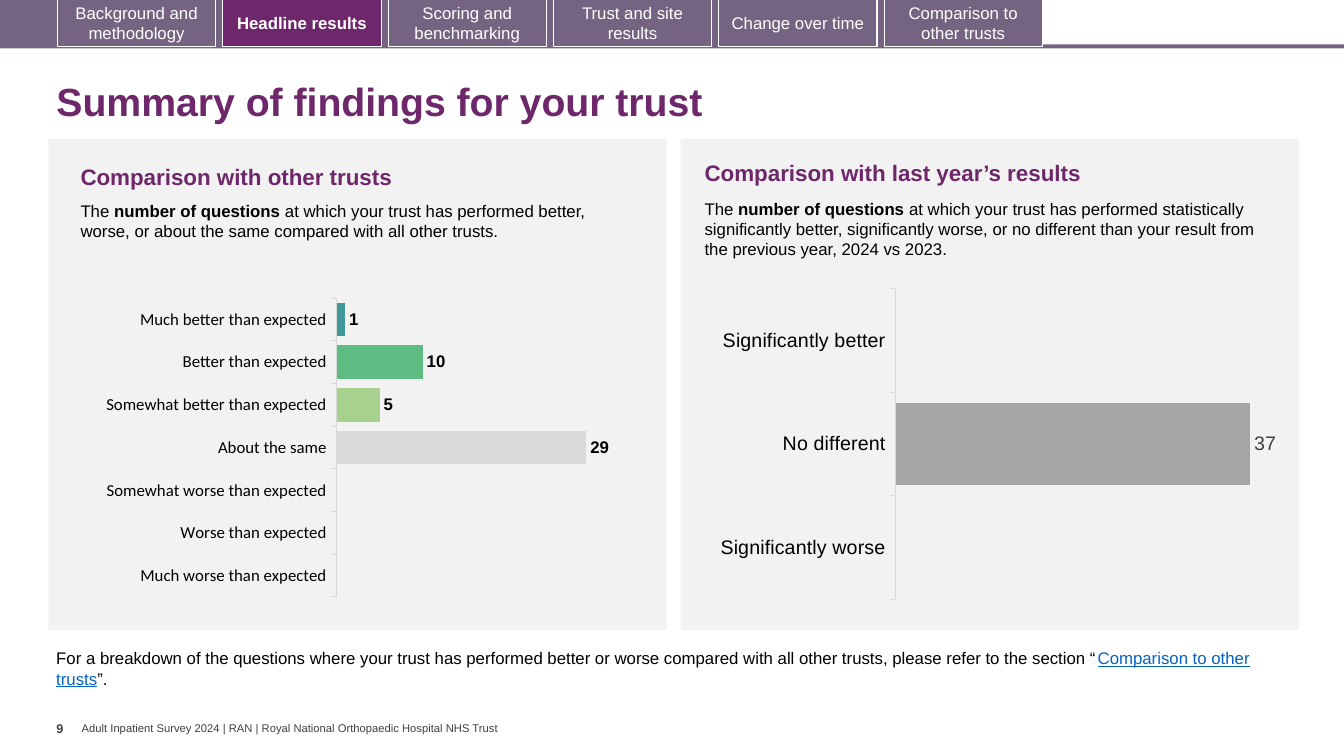
from typing import NamedTuple

from lxml.etree import SubElement
from pptx import Presentation
from pptx.chart.data import CategoryChartData
from pptx.dml.color import RGBColor
from pptx.enum.chart import XL_CHART_TYPE, XL_LABEL_POSITION, XL_TICK_LABEL_POSITION, XL_TICK_MARK
from pptx.enum.shapes import MSO_SHAPE
from pptx.enum.text import MSO_ANCHOR, MSO_AUTO_SIZE, PP_ALIGN
from pptx.oxml import parse_xml
from pptx.oxml.ns import nsdecls, qn
from pptx.util import Inches, Pt

PURPLE = RGBColor(0x6D, 0x27, 0x6A)
MAUVE = RGBColor(0x75, 0x63, 0x82)
WHITE = RGBColor(0xFF, 0xFF, 0xFF)
BLACK = RGBColor(0x00, 0x00, 0x00)
CHARCOAL = RGBColor(0x40, 0x40, 0x40)
PANEL_GREY = RGBColor(0xF2, 0xF2, 0xF2)
LIGHT_GREY = RGBColor(0xD9, 0xD9, 0xD9)
MID_GREY = RGBColor(0xA5, 0xA5, 0xA5)
LINK_BLUE = RGBColor(0x05, 0x63, 0xC1)
TEAL = RGBColor(0x41, 0x99, 0x99)
GREEN = RGBColor(0x5F, 0xBD, 0x83)
LIME = RGBColor(0xA9, 0xD1, 0x8E)
YELLOW = RGBColor(0xFF, 0xD9, 0x66)
GOLD = RGBColor(0xF1, 0xBE, 0x48)
ORANGE = RGBColor(0xE8, 0x77, 0x22)
SKY = RGBColor(0x9D, 0xC3, 0xE6)
VIOLET = RGBColor(0x70, 0x30, 0xA0)

TABS = ["Background and methodology", "Headline results", "Scoring and benchmarking",
        "Trust and site results", "Change over time", "Comparison to other trusts"]
CURRENT_TAB = "Headline results"


class Box(NamedTuple):
    """A rectangle in inches, divided into 100 columns and 100 rows."""
    left: float
    top: float
    width: float
    height: float

    def cell(self, column, row, columns, rows):
        """Return the box that covers the given columns and rows."""
        return Box(self.left + self.width * column / 100, self.top + self.height * row / 100,
                   self.width * columns / 100, self.height * rows / 100)

    def lengths(self):
        """Return the four lengths for placing a shape."""
        return [Inches(length) for length in self]


class Measure(NamedTuple):
    """The values of one bar chart and how they look."""
    counts: dict
    colours: list
    maximum: int
    plot_area: tuple
    axis_font: tuple
    label_font: tuple


OTHER_TRUSTS = Measure(
    {"Much better than expected": 1, "Better than expected": 10,
     "Somewhat better than expected": 5, "About the same": 29,
     "Somewhat worse than expected": None, "Worse than expected": None,
     "Much worse than expected": None},
    [TEAL, GREEN, LIME, LIGHT_GREY, YELLOW, GOLD, ORANGE], 35, (0.47, 0.07, 0.48, 0.87),
    ("Calibri", 12, BLACK, False), ("Arial", 12, BLACK, True))
LAST_YEAR = Measure(
    {"Significantly better": None, "No different": 37, "Significantly worse": None},
    [SKY, MID_GREY, VIOLET], 40, (0.36, 0.04, 0.61, 0.91),
    ("Arial", 14, BLACK, False), ("Arial", 14, CHARCOAL, False))


def style_font(font, name, size, colour, bold=False):
    """Set typeface, size, colour and weight."""
    font.name, font.size, font.bold = name, Pt(size), bold
    font.color.rgb = colour


def add_span(para, text, size, colour, bold=False):
    """Add one formatted run to a paragraph."""
    span = para.add_run()
    span.text = text
    style_font(span.font, "Arial", size, colour, bold)
    return span


def add_text(slide, box):
    """Add a wrapping text box and return its shape."""
    shape = slide.shapes.add_textbox(*box.lengths())
    shape.text_frame.word_wrap = True
    return shape


def add_block(slide, box, fill=None, line=None):
    """Add a plain rectangle with an optional fill and outline."""
    block = slide.shapes.add_shape(MSO_SHAPE.RECTANGLE, *box.lengths())
    block.shadow.inherit = False
    if fill is None:
        block.fill.background()
    else:
        block.fill.solid()
        block.fill.fore_color.rgb = fill
    if line is None:
        block.line.fill.background()
    else:
        block.line.color.rgb = line
        block.line.width = Pt(0.75)
    return block


def add_navigation(slide, box):
    """Draw the row of section tabs along the top."""
    add_block(slide, box.cell(0, 93.5, 100, 8.5), MAUVE)
    add_block(slide, box.cell(0, 0, 77.57, 100), MAUVE)
    for index, label in enumerate(TABS):
        current = label == CURRENT_TAB
        tab = add_block(slide, box.cell(4.28 + 12.3 * index, -2, 11.78, 100),
                        PURPLE if current else None, WHITE)
        tab.text_frame.vertical_anchor = MSO_ANCHOR.MIDDLE
        para = tab.text_frame.paragraphs[0]
        para.alignment = PP_ALIGN.CENTER
        add_span(para, label, 12, WHITE, current)


def add_title(slide, box):
    """Place and format the title placeholder."""
    title = slide.shapes.title
    title.left, title.top, title.width, title.height = box.lengths()
    title.text_frame.auto_size = MSO_AUTO_SIZE.NONE
    title.text_frame.vertical_anchor = MSO_ANCHOR.MIDDLE
    para = title.text_frame.paragraphs[0]
    para.alignment, para.line_spacing = PP_ALIGN.LEFT, 0.9
    add_span(para, "Summary of findings for your trust", 28, PURPLE, True)


def clear_backgrounds(chart, plot_area):
    """Fix the inner plot area and make the chart background transparent."""
    area = chart.plots[0]._element.getparent()
    for old in area.findall(qn("c:layout")):
        area.remove(old)
    layout = parse_xml(f"<c:layout {nsdecls('c')}/>")
    manual = SubElement(layout, qn("c:manualLayout"))
    settings = [("layoutTarget", "inner"), ("xMode", "edge"), ("yMode", "edge"),
                *zip("xywh", plot_area)]
    for name, value in settings:
        SubElement(manual, qn(f"c:{name}")).set("val", str(value))
    area.insert(0, layout)
    clear = (f"<c:spPr {nsdecls('c', 'a')}><a:noFill/>"
             "<a:ln><a:noFill/></a:ln></c:spPr>")
    area.append(parse_xml(clear))
    area.getparent().addnext(parse_xml(clear))


def add_bars(slide, box, measure):
    """Draw a bar chart with one colour for each category."""
    chart_data = CategoryChartData(number_format="0")
    chart_data.categories = list(measure.counts)
    chart_data.add_series("Series 1", list(measure.counts.values()))
    chart = slide.shapes.add_chart(XL_CHART_TYPE.BAR_CLUSTERED, *box.lengths(), chart_data).chart
    chart.has_legend = chart.has_title = False
    style_font(chart.font, *measure.axis_font)
    clear_backgrounds(chart, measure.plot_area)
    categories, values = chart.category_axis, chart.value_axis
    categories.reverse_order = True
    categories.major_tick_mark = XL_TICK_MARK.OUTSIDE
    categories.tick_label_position = XL_TICK_LABEL_POSITION.LOW
    categories.format.line.color.rgb = LIGHT_GREY
    categories.format.line.width = Pt(0.75)
    style_font(categories.tick_labels.font, *measure.axis_font)
    values.minimum_scale, values.maximum_scale = 0, measure.maximum
    values.has_major_gridlines = values.visible = False
    plot = chart.plots[0]
    plot.gap_width, plot.vary_by_categories, plot.has_data_labels = 27, False, True
    labels = plot.data_labels
    labels.show_value, labels.position = True, XL_LABEL_POSITION.OUTSIDE_END
    labels.number_format, labels.number_format_is_linked = "0", False
    style_font(labels.font, *measure.label_font)
    for index, colour in enumerate(measure.colours):
        fill = plot.series[0].points[index].format.fill
        fill.solid()
        fill.fore_color.rgb = colour


def add_panel(slide, box, heading, summary, measure, places):
    """Draw a grey panel with a heading, a summary and a bar chart."""
    heading_box, summary_box, chart_box = [box.cell(*place) for place in places]
    add_block(slide, box, PANEL_GREY)
    add_span(add_text(slide, heading_box).text_frame.paragraphs[0], heading, 16, PURPLE, True)
    para = add_text(slide, summary_box).text_frame.paragraphs[0]
    add_span(para, "The ", 12, BLACK)
    add_span(para, "number of questions ", 12, BLACK, True)
    add_span(para, summary, 12, BLACK)
    add_bars(slide, chart_box, measure)


def add_closing(slide, box):
    """Add the cross-reference, the page number and the footer line."""
    para = add_text(slide, box.cell(3.45, 0, 91.6, 44)).text_frame.paragraphs[0]
    add_span(para, "For a breakdown of the questions where your trust has performed better or worse "
             "compared with all other trusts, please refer to the section “", 12, BLACK)
    add_span(para, "Comparison to other trusts", 12, LINK_BLUE).font.underline = True
    add_span(para, "”.", 12, BLACK)
    number = add_text(slide, box.cell(4.2, 64.2, 1.88, 35.8)).text_frame
    number.word_wrap = False
    number.margin_left = number.margin_right = 0
    add_span(number.paragraphs[0], "9", 9, CHARCOAL, True)
    footer = add_text(slide, box.cell(6.08, 69.6, 45.76, 11.6)).text_frame
    footer.margin_left = footer.margin_right = footer.margin_top = footer.margin_bottom = 0
    footer.vertical_anchor = MSO_ANCHOR.MIDDLE
    add_span(footer.paragraphs[0], "Adult Inpatient Survey 2024 | RAN | "
             "Royal National Orthopaedic Hospital NHS Trust", 8, CHARCOAL)


def main():
    """Build the summary slide and save the deck."""
    deck = Presentation()
    page = Box(0, 0, 13.33, 7.5)
    deck.slide_width, deck.slide_height = Inches(page.width), Inches(page.height)
    slide = deck.slides.add_slide(deck.slide_layouts[5])
    add_navigation(slide, page.cell(0, 0, 100, 6.27))
    add_title(slide, page.cell(3.45, 8.93, 93.7, 9.6))
    add_panel(slide, page.cell(3.6, 18.4, 46, 64.93), "Comparison with other trusts",
              "at which your trust has performed better, worse, or about the same compared with "
              "all other trusts.", OTHER_TRUSTS,
              [(3.59, 3.9, 90, 7.6), (3.59, 11.5, 86.3, 14.6), (-1.14, 27.5, 101.63, 70)])
    add_panel(slide, page.cell(50.64, 18.4, 46, 64.93), "Comparison with last year’s results",
              "at which your trust has performed statistically significantly better, significantly "
              "worse, or no different than your result from the previous year, 2024 vs 2023.",
              LAST_YEAR,
              [(2.28, 3.1, 89.4, 7.6), (2.28, 11.1, 93.64, 14.6), (-1.79, 27.7, 101.63, 69.6)])
    add_closing(slide, page.cell(0, 85.07, 100, 14.93))
    deck.save("out.pptx")


if __name__ == "__main__":
    main()
